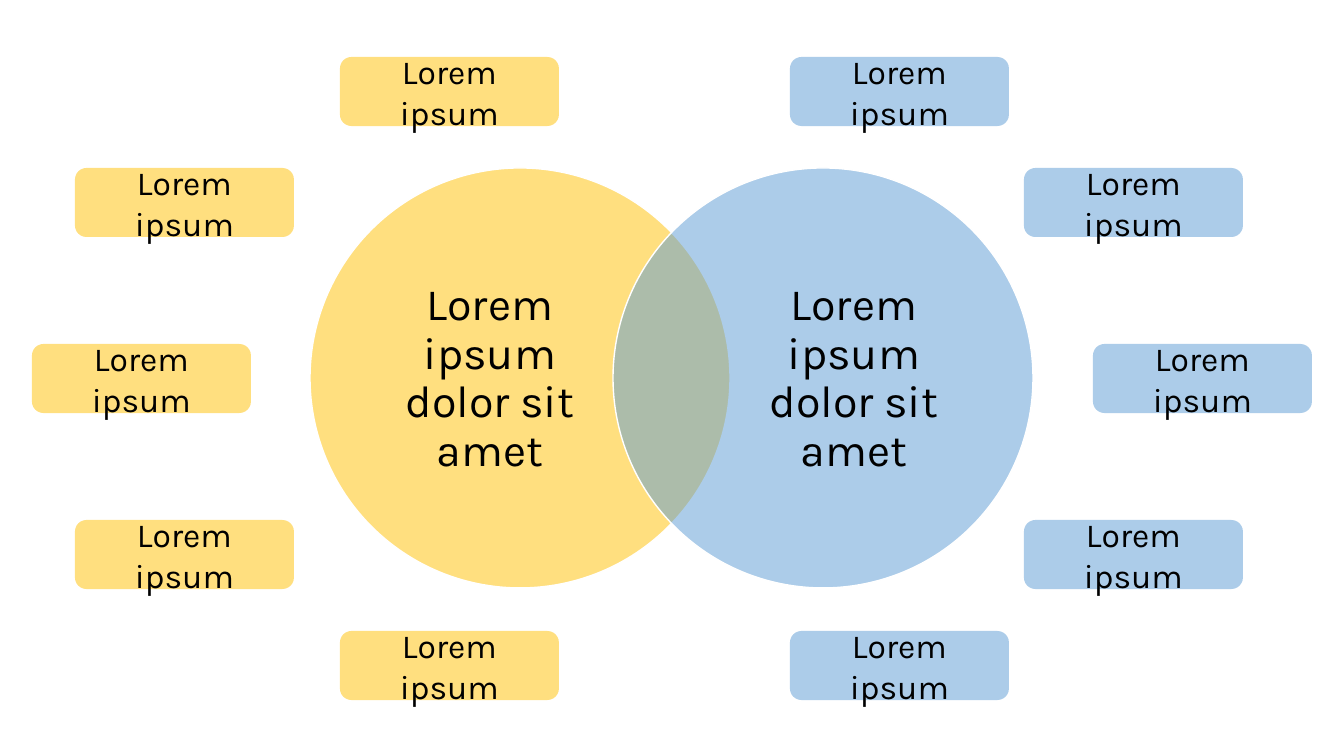
from dataclasses import dataclass

from lxml import etree
from pptx import Presentation
from pptx import util as u
from pptx.dml.color import RGBColor
from pptx.enum import shapes, text
from pptx.oxml.ns import qn

EMU_PER_PX = 914400 / 100.8


def px(length):
    return u.Emu(round(length * EMU_PER_PX))


@dataclass(frozen=True)
class Theme:
    font: str = "Karla"
    ink: str = "000000"
    outline: str = "FFFFFF"
    gold: str = "FFC000"
    blue: str = "5B9BD5"
    opacity: int = 50
    circle_size: int = 32
    label_size: int = 24
    outline_width: int = 1


class VennSlide:
    def __init__(self, deck, theme):
        self.theme = theme
        self.slide = deck.slides.add_slide(deck.slide_layouts[6])
        self.venn = self.slide.shapes.add_group_shape()

    def _tint(self, shape, color):
        shape.shadow.inherit = False
        shape.fill.solid()
        shape.fill.fore_color.rgb = RGBColor.from_string(color)
        srgb = shape.fill._xPr.find(f".//{qn('a:srgbClr')}")
        etree.SubElement(srgb, qn("a:alpha"), val=str(self.theme.opacity * 1000))

    def _write(self, shape, wording, size):
        frame = shape.text_frame
        frame.word_wrap = True
        frame.vertical_anchor = text.MSO_ANCHOR.MIDDLE
        frame.text = wording
        paragraph = frame.paragraphs[0]
        paragraph.alignment = text.PP_ALIGN.CENTER
        font = paragraph.runs[0].font
        font.name = self.theme.font
        font.size = u.Pt(size)
        font.color.rgb = RGBColor.from_string(self.theme.ink)
        return paragraph

    def circle(self, left, top, diameter, color):
        circle = self.venn.shapes.add_shape(
            shapes.MSO_SHAPE.OVAL, px(left), px(top), px(diameter), px(diameter))
        self._tint(circle, color)
        circle.line.color.rgb = RGBColor.from_string(self.theme.outline)
        circle.line.width = u.Pt(self.theme.outline_width)

    def caption(self, left, top, width, height, wording):
        caption = self.venn.shapes.add_textbox(px(left), px(top), px(width), px(height))
        paragraph = self._write(caption, wording, self.theme.circle_size)
        paragraph.line_spacing = 0.9
        frame = caption.text_frame
        frame.margin_left = frame.margin_right = 0
        frame.margin_top = frame.margin_bottom = 0

    def label(self, left, top, width, height, color, wording):
        label = self.slide.shapes.add_shape(
            shapes.MSO_SHAPE.ROUNDED_RECTANGLE, px(left), px(top), px(width), px(height))
        self._tint(label, color)
        label.line.fill.background()
        self._write(label, wording, self.theme.label_size)


def main():
    deck = Presentation()
    deck.slide_width, deck.slide_height = px(1344), px(756)
    theme = Theme()
    venn = VennSlide(deck, theme)

    # Overlapping circles with their captions
    for color, circle_left, caption_left in (
            (theme.gold, 310, 369), (theme.blue, 613, 733)):
        venn.circle(circle_left, 168, 420, color)
        venn.caption(caption_left, 218, 242, 322, "Lorem ipsum dolor sit amet")

    # Labels fanned around each circle, mirrored top to bottom
    label_tops = (57, 168, 344, 520, 631)
    for color, outer, middle, inner in (
            (theme.gold, 340, 75, 32), (theme.blue, 790, 1024, 1093)):
        for left, top in zip((outer, middle, inner, middle, outer), label_tops):
            venn.label(left, top, 219, 69, color, "Lorem ipsum")

    deck.save("out.pptx")


if __name__ == "__main__":
    main()
